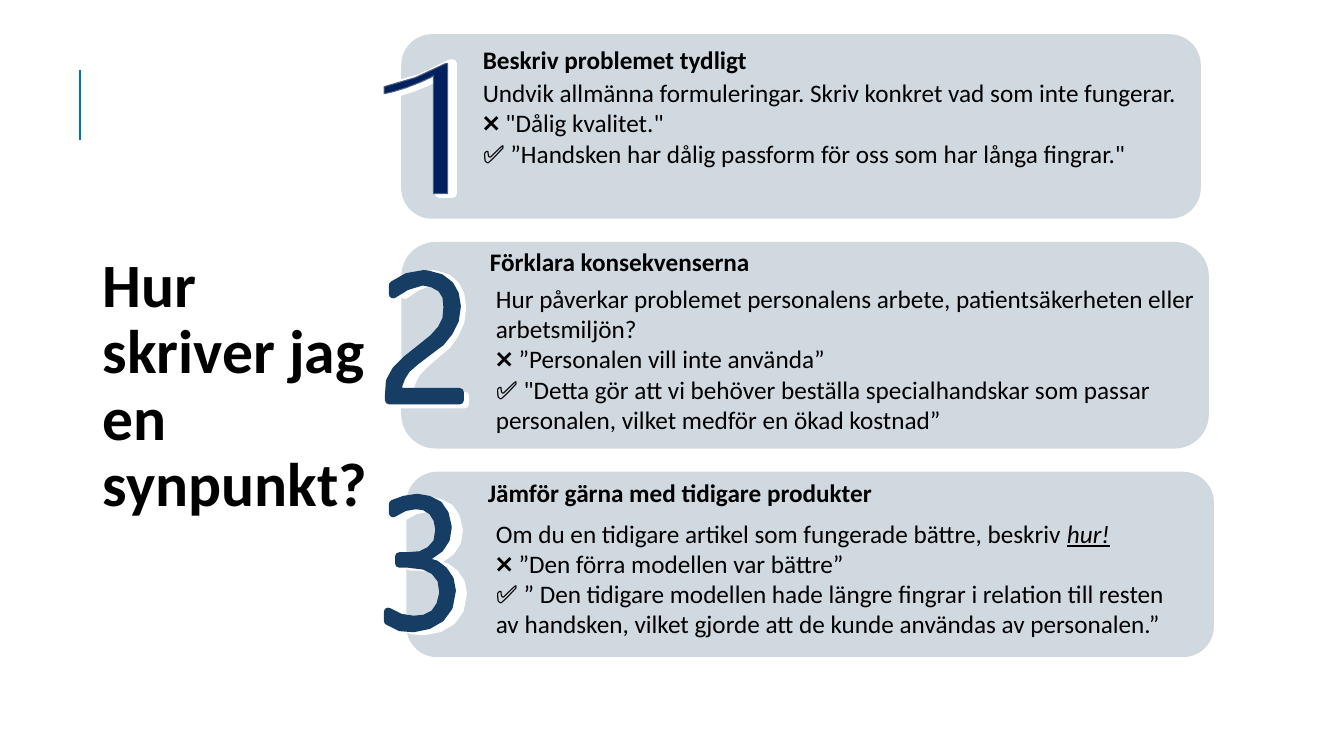
from lxml import etree
from pptx import Presentation
from pptx.dml.color import RGBColor
from pptx.enum.shapes import MSO_CONNECTOR as CONNECTOR, MSO_SHAPE as SHAPE
from pptx.enum.text import MSO_ANCHOR as ANCHOR, MSO_AUTO_SIZE as AUTO_SIZE, PP_ALIGN as ALIGN
from pptx.oxml.ns import qn
from pptx.util import Inches, Pt

NAVY, DEEP, GREY, ACCENT = "163E64", "002060", "51647E", "0070C0"
WHITE, BLACK = "FFFFFF", "000000"

# Digit outlines in hundredths of an inch
ONE = [(49, 129), (49, 12), (46, 14), (35, 19), (22, 24), (9, 28), (0, 30), (0, 23),
       (31, 14), (61, 0), (63, 0), (63, 129)]
TWO = [(0, 126), (0, 121), (1, 107), (7, 96), (18, 85), (33, 73), (44, 64), (52, 55),
       (57, 45), (58, 33), (57, 22), (52, 14), (43, 9), (33, 7), (17, 12), (4, 20), (4, 11),
       (18, 3), (35, 0), (40, 1), (51, 4), (60, 11), (65, 20), (67, 32), (65, 46),
       (59, 58), (51, 68), (39, 77), (26, 87), (17, 95), (12, 103), (9, 111), (9, 118),
       (70, 118), (70, 126)]
THREE = [(25, 129), (12, 128), (0, 122), (0, 113), (12, 119), (25, 121), (36, 120),
         (46, 115), (52, 106), (55, 94), (53, 81), (46, 72), (36, 67), (20, 65), (11, 65),
         (11, 58), (19, 58), (32, 57), (42, 52), (49, 44), (51, 31), (49, 21), (44, 13),
         (36, 8), (27, 7), (16, 9), (5, 15), (5, 6), (16, 2), (29, 0), (40, 2), (50, 7),
         (56, 16), (59, 29), (57, 41), (51, 50), (37, 60), (36, 60), (36, 63), (37, 63),
         (47, 66), (55, 72), (61, 81), (63, 92), (60, 108), (52, 119), (40, 126)]

# Each body is a list of lines; each line is a list of (text, emphasised) runs
STEPS = [
    dict(panel=(3.98, 0.34, 7.93, 1.83), outline=ONE,
         back=(3.88, 0.63, 0.61, 1.29), front=(3.81, 0.63, 0.63, 1.29),
         colour=DEEP, edge=GREY, edge_width=0.75,
         heading="Beskriv problemet tydligt", heading_box=(4.69, 0.39, 4.88, 0.4),
         body_box=(4.69, 0.72, 7.1, 1.01),
         body=[[("Undvik allmänna formuleringar. Skriv konkret vad som inte fungerar.", False)],
               [('❌ "Dålig kvalitet."', False)],
               [('✅ ”Handsken har dålig passform för oss som har långa fingrar."', False)]]),
    dict(panel=(3.98, 2.4, 8.01, 2.05), outline=TWO,
         back=(3.98, 2.72, 0.63, 1.29), front=(3.86, 2.72, 0.7, 1.25),
         colour=NAVY, edge=NAVY, edge_width=6,
         heading="Förklara konsekvenserna", heading_box=(4.76, 2.39, 4.88, 0.4),
         body_box=(4.82, 2.76, 7.37, 1.62),
         body=[[("Hur påverkar problemet personalens arbete, patientsäkerheten eller "
                 "arbetsmiljön?", False)],
               [("❌ ”Personalen vill inte använda”", False)],
               [('✅ "Detta gör att vi behöver beställa specialhandskar som passar '
                 "personalen, vilket medför en ökad kostnad”", False)]]),
    dict(panel=(4.03, 4.68, 8.01, 1.84), outline=THREE,
         back=(3.96, 4.97, 0.63, 1.29), front=(3.85, 4.94, 0.63, 1.29),
         colour=NAVY, edge=NAVY, edge_width=6,
         heading="Jämför gärna med tidigare produkter", heading_box=(4.74, 4.69, 4.84, 0.4),
         body_box=(4.82, 5.09, 7.07, 1.31),
         body=[[("Om du en tidigare artikel som fungerade bättre, beskriv ", False),
                ("hur!", True)],
               [("❌ ”Den förra modellen var bättre”", False)],
               [("✅ ” Den tidigare modellen hade längre fingrar i relation till resten av "
                 "handsken, vilket gjorde att de kunde användas av personalen.”", False)]]),
]


def rgb(colour):
    return RGBColor.from_string(colour)


def inches(box):
    return [Inches(length) for length in box]


class SlideBuilder:
    font = "Calibri"
    text_size = 18
    title_size = 44

    def __init__(self, slide):
        self.slide = slide
        self.shapes = slide.shapes

    def run(self, paragraph, text, size, bold=False, emphasised=False):
        run = paragraph.add_run()
        run.text = text
        font = run.font
        font.name, font.size, font.bold = self.font, Pt(size), bold
        font.italic = font.underline = emphasised
        font.color.rgb = rgb(BLACK)

    def title(self, box, text):
        title = self.shapes.title
        title.left, title.top, title.width, title.height = inches(box)
        frame = title.text_frame
        frame.word_wrap = True
        frame.auto_size = AUTO_SIZE.NONE
        frame.vertical_anchor = ANCHOR.MIDDLE
        paragraph = frame.paragraphs[0]
        paragraph.alignment = ALIGN.LEFT
        paragraph.line_spacing = 0.9
        self.run(paragraph, text, self.title_size, bold=True)

    def rule(self, x, top, bottom):
        rule = self.shapes.add_connector(CONNECTOR.STRAIGHT, *inches((x, top, x, bottom)))
        rule.line.color.rgb = rgb(ACCENT)
        rule.line.width = Pt(1.5)
        etree.SubElement(rule._element.spPr, qn("a:effectLst"))

    def panel(self, box, opacity=20):
        """Add a rounded panel with a see-through fill; opacity is in percent."""
        panel = self.shapes.add_shape(SHAPE.ROUNDED_RECTANGLE, *inches(box))
        panel.shadow.inherit = False
        panel.line.fill.background()
        panel.fill.solid()
        panel.fill.fore_color.rgb = rgb(NAVY)
        colour = panel._element.spPr.find(f"{qn('a:solidFill')}/{qn('a:srgbClr')}")
        etree.SubElement(colour, qn("a:alpha"), val=str(opacity * 1000))

    def digit(self, outline, box, fill, edge, edge_width):
        """Draw an outline stretched to fill the box."""
        left, top, width, height = inches(box)
        x_scale = width / max(x for x, y in outline)
        y_scale = height / max(y for x, y in outline)
        points = [(left + x * x_scale, top + y * y_scale) for x, y in outline]
        builder = self.shapes.build_freeform(*points[0])
        builder.add_line_segments(points[1:], close=True)
        digit = builder.convert_to_shape()
        digit.shadow.inherit = False
        digit.fill.solid()
        digit.fill.fore_color.rgb = rgb(fill)
        digit.line.color.rgb = rgb(edge)
        digit.line.width = Pt(edge_width)

    def text(self, box, lines, bold=False):
        frame = self.shapes.add_textbox(*inches(box)).text_frame
        frame.word_wrap = True
        frame.auto_size = AUTO_SIZE.SHAPE_TO_FIT_TEXT
        paragraph = frame.paragraphs[0]
        for index, line in enumerate(lines):
            if index:
                paragraph.add_line_break()
            for text, emphasised in line:
                self.run(paragraph, text, self.text_size, bold, emphasised)

    def step(self, step):
        self.panel(step["panel"])
        self.digit(step["outline"], step["back"], WHITE, WHITE, 6)
        self.digit(step["outline"], step["front"], step["colour"], step["edge"],
                   step["edge_width"])
        self.text(step["heading_box"], [[(step["heading"], False)]], bold=True)
        self.text(step["body_box"], step["body"])


def main():
    deck = Presentation()
    deck.slide_width, deck.slide_height = Inches(13.33), Inches(7.5)
    builder = SlideBuilder(deck.slides.add_slide(deck.slide_layouts[5]))
    builder.rule(0.79, 0.69, 1.39)
    builder.title((0.92, 0.92, 2.93, 5.84), "Hur skriver jag en synpunkt?")
    for step in STEPS:
        builder.step(step)
    deck.save("out.pptx")


if __name__ == "__main__":
    main()
